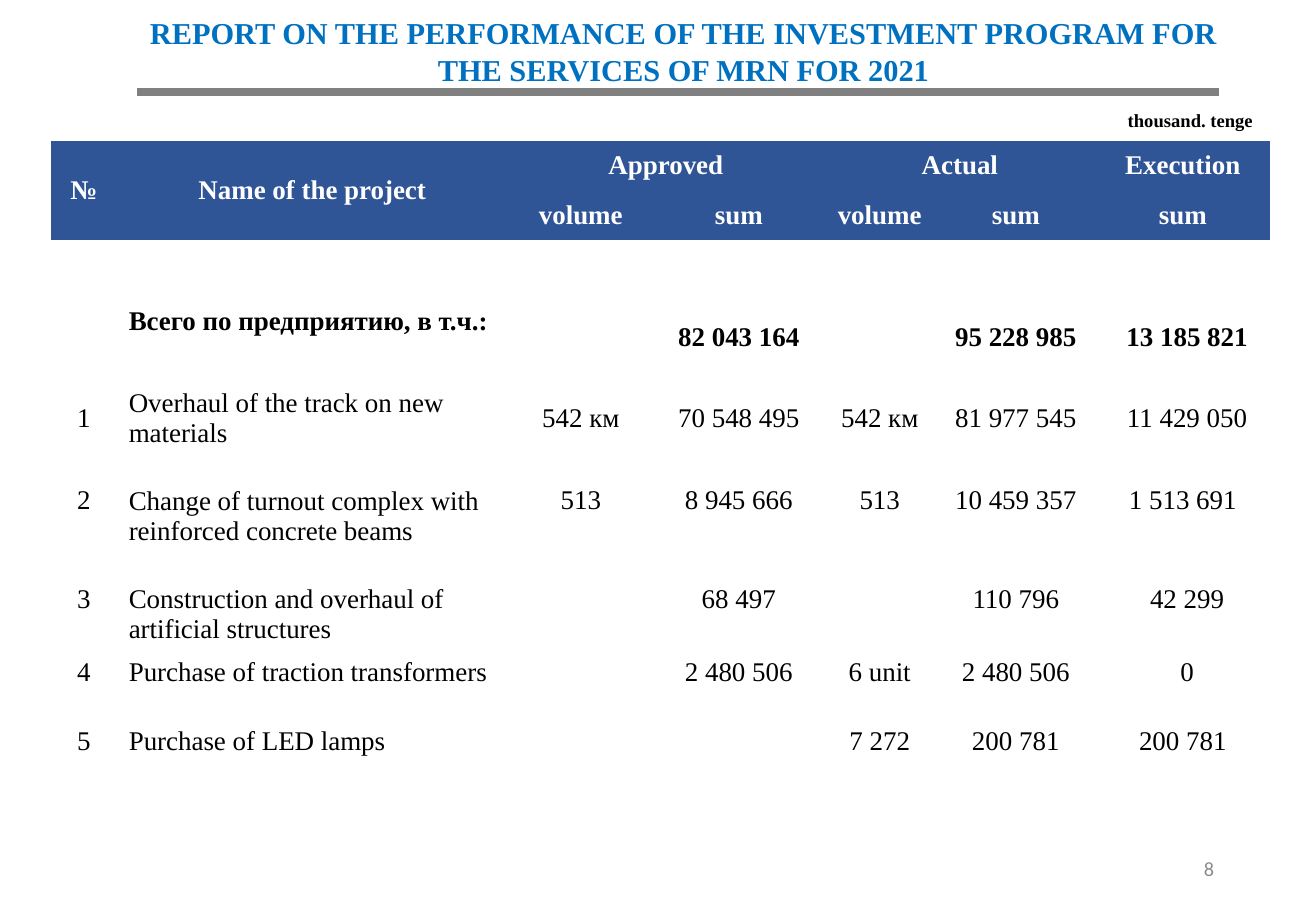
from lxml.etree import SubElement
from pptx import Presentation
from pptx.dml.color import RGBColor
from pptx.enum.shapes import MSO_CONNECTOR
from pptx.enum.text import MSO_ANCHOR, PP_ALIGN
from pptx.oxml.ns import qn
from pptx.util import Inches, Pt

SERIF = "Times New Roman"
WIDTHS = [0.54, 3.22, 1.2, 1.4, 0.92, 1.32, 1.43]
HEIGHTS = [0.41, 0.41, 0.39, 0.81, 0.52, 0.82, 0.8, 0.4, 0.75]
HEAD = [
    ["№", "Name of the project", "Approved", "", "Actual", "", "Execution"],
    ["", "", "volume", "sum", "volume", "sum", "sum"],
]
BODY = [
    [""] * 7,
    ["", "Всего по предприятию, в т.ч.:", "", "82 043 164", "", "95 228 985", "13 185 821"],
    ["1", "Overhaul of the track on new materials", "542 км", "70 548 495",
     "542 км", "81 977 545", "11 429 050"],
    ["2", "Change of turnout complex with reinforced concrete beams", "513", "8 945 666",
     "513", "10 459 357", "1 513 691"],
    ["3", "Construction and overhaul of artificial structures", "", "68 497",
     "", "110 796", "42 299"],
    ["4", "Purchase of traction transformers", "", "2 480 506", "6 unit", "2 480 506", "0"],
    ["5", "Purchase of LED lamps", "", "", "7 272", "200 781", "200 781"],
]
MERGES = [(0, 0, 1, 0), (0, 1, 1, 1), (0, 2, 0, 3), (0, 4, 0, 5)]
TOTAL = 3
NAME_PADS = {3: {"margin_bottom": 0.25}, 5: {"margin_top": 0.25}, 6: {"margin_top": 0.25}}
SHIFTED = {3, 4, 6, 7}


def color(value):
    return RGBColor.from_string(value)


def style(para, align, tint, **form):
    para.alignment = align
    for run in para.runs:
        for key, value in form.items():
            setattr(run.font, key, value)
        run.font.color.rgb = color(tint)


def label(slide, box, text, align, anchor, tint, **form):
    frame = slide.shapes.add_textbox(*map(Inches, box)).text_frame
    frame.word_wrap = True
    frame.vertical_anchor = anchor
    frame.text = text
    style(frame.paragraphs[0], align, tint, **form)


def border(cell, tint):
    props = cell._tc.get_or_add_tcPr()
    for side in "LRTB":
        line = SubElement(props, qn(f"a:ln{side}"), w=str(Pt(1)))
        if tint:
            fill = SubElement(line, qn("a:solidFill"))
            SubElement(fill, qn("a:srgbClr"), val=tint)
        else:
            SubElement(line, qn("a:noFill"))


def fill_cell(cell, row, col, text):
    head = row < len(HEAD)
    pads = dict.fromkeys(["margin_left", "margin_right", "margin_top", "margin_bottom"], 0)
    if col == 1 and not head:
        pads.update({"margin_left": 0.1}, **NAME_PADS.get(row, {}))
    if col == 6 and row in SHIFTED:
        pads["margin_left"] = 0.07
    for key, value in pads.items():
        setattr(cell, key, Inches(value))
    cell.vertical_anchor = MSO_ANCHOR.MIDDLE
    border(cell, None if head else "FFFFFF")
    if head:
        cell.fill.solid()
        cell.fill.fore_color.rgb = color("2F5597")
    else:
        cell.fill.background()
    if text:
        cell.text = text
        align = PP_ALIGN.LEFT if col == 1 and not head else PP_ALIGN.CENTER
        style(cell.text_frame.paragraphs[0], align, "FFFFFF" if head else "000000",
              name=SERIF, size=Pt(16), bold=head or row == TOTAL)


def header(slide, left, top, width):
    label(slide, (left, top, width, 1.01),
          "REPORT ON THE PERFORMANCE OF THE INVESTMENT PROGRAM FOR THE SERVICES OF MRN FOR 2021",
          PP_ALIGN.CENTER, MSO_ANCHOR.TOP, "0070C0", name=SERIF, size=Pt(18), bold=True)
    y = Inches(top + 0.69)
    rule = slide.shapes.add_connector(
        MSO_CONNECTOR.STRAIGHT, Inches(left + 0.2), y, Inches(left + width - 0.29), y)
    rule.line.color.rgb = color("808080")
    rule.line.width = Pt(4.5)
    SubElement(rule._element.spPr, qn("a:effectLst"))


def report(slide, left, top):
    rows = HEAD + BODY
    size = (sum(WIDTHS), sum(HEIGHTS))
    table = slide.shapes.add_table(
        len(rows), len(WIDTHS), *map(Inches, (left, top, *size))).table
    table.first_row = table.horz_banding = False
    for col, width in zip(table.columns, WIDTHS):
        col.width = Inches(width)
    for row, height in zip(table.rows, HEIGHTS):
        row.height = Inches(height)
    for i, row in enumerate(rows):
        for j, text in enumerate(row):
            fill_cell(table.cell(i, j), i, j, text)
    for r1, c1, r2, c2 in MERGES:
        table.cell(r1, c1).merge(table.cell(r2, c2))
    label(slide, (left + 8.73, top - 0.32, 1.26, 0.29), "thousand. tenge",
          PP_ALIGN.RIGHT, MSO_ANCHOR.MIDDLE, "000000", name=SERIF, size=Pt(11), bold=True)


def footer(slide, left, top):
    label(slide, (left, top, 2.44, 0.4), "8", PP_ALIGN.RIGHT, MSO_ANCHOR.MIDDLE,
          "8C8C8C", name="Calibri", size=Pt(12))


def main():
    deck = Presentation()
    deck.slide_width, deck.slide_height = Inches(10.83), Inches(7.5)
    slide = deck.slides.add_slide(deck.slide_layouts[6])
    footer(slide, 7.65, 6.95)
    header(slide, 0.93, 0.07, 9.39)
    report(slide, 0.42, 1.16)
    deck.save("out.pptx")


if __name__ == "__main__":
    main()
